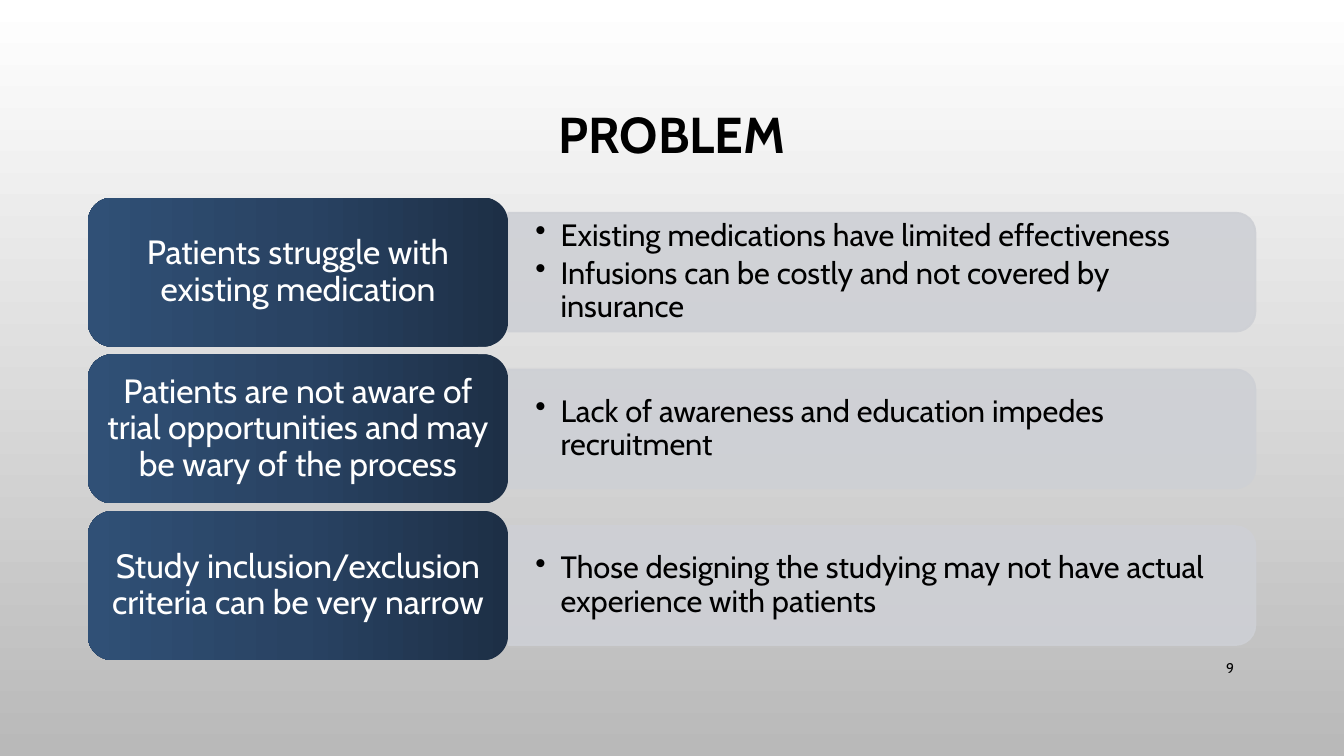
"""Build the PROBLEM slide: three blue labels, each with a bar of bullet points."""
import copy
from dataclasses import dataclass

import lxml.etree
import pptx
import pptx.dml.color
import pptx.dml.fill
import pptx.enum.shapes
import pptx.enum.text
import pptx.oxml.ns
import pptx.shapes.autoshape
import pptx.slide
import pptx.text.text
import pptx.util

SHAPES = pptx.enum.shapes.MSO_SHAPE
ALIGN = pptx.enum.text.PP_ALIGN


@dataclass(frozen=True)
class Theme:
    font: str = "Cabin"
    dark: str = "000000"
    light: str = "FFFFFF"
    bar: str = "CED0D5"
    bar_alpha: int = 90
    background: tuple[str, ...] = ("FFFFFF", "B9B9B9")
    label: tuple[str, ...] = ("1D2F46", "294363", "305076")
    title_size: int = 36
    label_size: int = 24
    bullet_size: int = 22
    number_size: int = 10


@dataclass(frozen=True)
class Area:
    """A rectangle in percent of the slide's width and height."""
    left: float
    top: float
    width: float
    height: float

    def lengths(self) -> tuple[int, int, int, int]:
        return (round(self.left * WIDTH / 100), round(self.top * HEIGHT / 100),
                round(self.width * WIDTH / 100), round(self.height * HEIGHT / 100))


@dataclass(frozen=True)
class Problem:
    label: str
    bullets: tuple[str, ...]


THEME = Theme()
WIDTH = pptx.util.Inches(13.333)
HEIGHT = pptx.util.Inches(7.5)
TITLE = Area(7.5, 6.53, 85, 23.33)
NUMBER = Area(86.25, 85.73, 6.3, 5.33)
FIRST_LABEL = Area(6.53, 26.13, 31.28, 19.73)
ROW_PITCH = 20.73
BAR_WIDTH, BAR_HEIGHT = 55.6, 15.73
BULLETS_WIDTH, BULLETS_HEIGHT = 55.1, 14.27

PROBLEMS = (
    Problem("Patients struggle with existing medication",
            ("Existing medications have limited effectiveness",
             "Infusions can be costly and not covered by insurance")),
    Problem("Patients are not aware of trial opportunities and may be wary of the process",
            ("Lack of awareness and education impedes recruitment",)),
    Problem("Study inclusion/exclusion criteria can be very narrow",
            ("Those designing the studying may not have actual experience with patients",)),
)


def rgb(code: str) -> pptx.dml.color.RGBColor:
    return pptx.dml.color.RGBColor.from_string(code)


def fill_gradient(fill: pptx.dml.fill.FillFormat, colours: tuple[str, ...], angle: int) -> None:
    fill.gradient()
    fill.gradient_angle = angle
    first = fill.gradient_stops[0]._gs
    for _ in colours[2:]:
        first.addnext(copy.deepcopy(first))
    for index, (stop, colour) in enumerate(zip(fill.gradient_stops, colours)):
        stop.position = index / (len(colours) - 1)
        stop.color.rgb = rgb(colour)


def write(frame: pptx.text.text.TextFrame, lines: tuple[str, ...], size: int, colour: str,
          align: ALIGN, bold: bool = False, bullet: str = "", spacing: float = 0.9) -> None:
    frame.word_wrap = True
    frame.vertical_anchor = pptx.enum.text.MSO_ANCHOR.MIDDLE
    for index, line in enumerate(lines):
        para = frame.add_paragraph() if index else frame.paragraphs[0]
        para.text = line
        para.alignment = align
        para.line_spacing = spacing
        if bullet:
            para.space_after = pptx.util.Pt(3.5)
            properties = para._p.get_or_add_pPr()
            indent = pptx.util.Inches(0.25)
            properties.set("marL", str(indent))
            properties.set("indent", str(-indent))
            mark = lxml.etree.SubElement(properties, pptx.oxml.ns.qn("a:buChar"))
            mark.set("char", bullet)
        para.font.name = THEME.font
        para.font.size = pptx.util.Pt(size)
        para.font.bold = bold
        para.font.color.rgb = rgb(colour)


def add_text(page: pptx.slide.Slide, area: Area) -> pptx.text.text.TextFrame:
    return page.shapes.add_textbox(*area.lengths()).text_frame


def add_bar(page: pptx.slide.Slide, area: Area) -> None:
    left, top, width, height = area.lengths()
    bar = page.shapes.add_shape(SHAPES.ROUND_2_SAME_RECTANGLE, left + (width - height) // 2,
                                top + (height - width) // 2, height, width)
    bar.rotation = 90
    bar.shadow.inherit = False
    bar.fill.solid()
    bar.fill.fore_color.rgb = rgb(THEME.bar)
    bar.line.color.rgb = rgb(THEME.bar)
    bar.line.width = pptx.util.Pt(1.25)
    for colour in bar._element.spPr.iter(pptx.oxml.ns.qn("a:srgbClr")):
        alpha = lxml.etree.SubElement(colour, pptx.oxml.ns.qn("a:alpha"))
        alpha.set("val", str(THEME.bar_alpha * 1000))


def add_label(page: pptx.slide.Slide, area: Area, text: str) -> None:
    label = page.shapes.add_shape(SHAPES.ROUNDED_RECTANGLE, *area.lengths())
    label.shadow.inherit = False
    label.line.fill.background()
    fill_gradient(label.fill, THEME.label, 180)
    write(label.text_frame, (text,), THEME.label_size, THEME.light, ALIGN.CENTER)


def add_problem(page: pptx.slide.Slide, row: int, problem: Problem) -> None:
    top = FIRST_LABEL.top + row * ROW_PITCH
    middle = top + FIRST_LABEL.height / 2
    right = FIRST_LABEL.left + FIRST_LABEL.width
    add_bar(page, Area(right, middle - BAR_HEIGHT / 2, BAR_WIDTH, BAR_HEIGHT))
    frame = add_text(page, Area(right, middle - BULLETS_HEIGHT / 2, BULLETS_WIDTH, BULLETS_HEIGHT))
    frame.margin_left = frame.margin_right = pptx.util.Inches(0.27)
    frame.margin_top = frame.margin_bottom = pptx.util.Inches(0.14)
    write(frame, problem.bullets, THEME.bullet_size, THEME.dark, ALIGN.LEFT, bullet="•")
    add_label(page, Area(FIRST_LABEL.left, top, FIRST_LABEL.width, FIRST_LABEL.height),
              problem.label)


def main() -> None:
    deck = pptx.Presentation()
    deck.slide_width, deck.slide_height = WIDTH, HEIGHT
    page = deck.slides.add_slide(deck.slide_layouts[6])
    fill_gradient(page.background.fill, THEME.background, 270)
    write(add_text(page, TITLE), ("PROBLEM",), THEME.title_size, THEME.dark,
          ALIGN.CENTER, bold=True)
    write(add_text(page, NUMBER), ("9",), THEME.number_size, THEME.dark,
          ALIGN.RIGHT, spacing=1.0)
    for row, problem in enumerate(PROBLEMS):
        add_problem(page, row, problem)
    deck.save("out.pptx")


if __name__ == "__main__":
    main()
